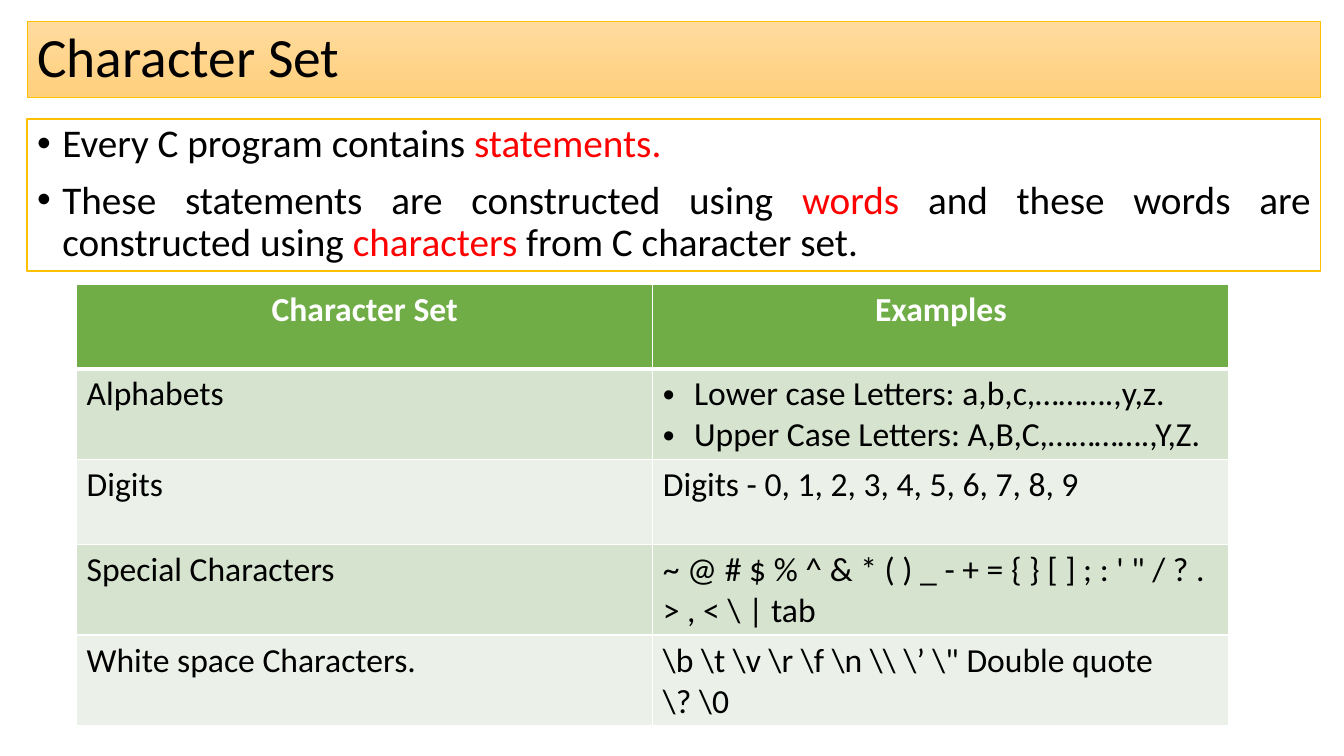
from lxml import etree
from pptx import Presentation
from pptx.dml.color import RGBColor
from pptx.enum.text import MSO_ANCHOR, MSO_AUTO_SIZE, PP_ALIGN
from pptx.oxml.ns import qn
from pptx.util import Inches, Pt

LEFT, CENTER, JUSTIFY = PP_ALIGN.LEFT, PP_ALIGN.CENTER, PP_ALIGN.JUSTIFY
MIDDLE, NO_AUTOFIT = MSO_ANCHOR.MIDDLE, MSO_AUTO_SIZE.NONE

INTRO = [
    [("Every C program contains ", False), ("statements. ", True)],
    [("These statements are constructed using ", False), ("words", True),
     (" and these words are constructed using ", False), ("characters", True),
     (" from C character set.", False)],
]
HEADINGS = ["Character Set", "Examples"]
CHARACTER_SETS = [
    ("Alphabets", ["Lower case Letters: a,b,c,……….,y,z.",
                   "Upper Case Letters: A,B,C,………….,Y,Z."], True),
    ("Digits", ["Digits - 0, 1, 2, 3, 4, 5, 6, 7, 8, 9"], False),
    ("Special Characters",
     [r"""~ @ # $ % ^ & * ( ) _ - + = { } [ ] ; : ' " / ? . > , < \ | tab"""], False),
    ("White space Characters.",
     [r"""\b \t \v \r \f \n \\ \’ \" Double quote""", r"\? \0"], False),
]


def rgb(value):
    return RGBColor.from_string(value)


class CharacterSetSlide:
    """Holds the slide and its style, and draws each kind of element."""

    FONT = "Calibri"
    BLACK, WHITE, RED, GOLD = "000000", "FFFFFF", "FF0000", "FFC000"
    TITLE_GRADIENT = ("FFDB9E", "FFD07C")
    HEADER_FILL, BAND_FILLS = "70AD47", ("D5E3CF", "EBF1E9")

    def __init__(self, presentation):
        self.slide = presentation.slides.add_slide(presentation.slide_layouts[5])

    def style(self, paragraph, size, color, align=LEFT, bold=False):
        font = paragraph.font
        font.name, font.size, font.bold = self.FONT, Pt(size), bold
        font.color.rgb = rgb(color)
        paragraph.alignment = align

    def bullet(self, paragraph, indent):
        properties = paragraph._p.get_or_add_pPr()
        properties.set("marL", str(Inches(indent)))
        properties.set("indent", str(-Inches(indent)))
        mark_font = etree.Element(qn("a:buFont"), typeface="Arial")
        mark = etree.Element(qn("a:buChar"), char="•")
        defaults = properties.find(qn("a:defRPr"))
        defaults.addprevious(mark_font)
        defaults.addprevious(mark)

    def outline(self, shape, width):
        shape.line.color.rgb = rgb(self.GOLD)
        shape.line.width = Pt(width)

    def title(self, text, left, top, width, height):
        title = self.slide.shapes.title
        title.left, title.top = Inches(left), Inches(top)
        title.width, title.height = Inches(width), Inches(height)
        title.fill.gradient()
        title.fill.gradient_angle = 270
        for stop, color in zip(title.fill.gradient_stops, self.TITLE_GRADIENT):
            stop.color.rgb = rgb(color)
        self.outline(title, 0.5)
        frame = title.text_frame
        frame.text = text
        frame.auto_size, frame.vertical_anchor = NO_AUTOFIT, MIDDLE
        frame.paragraphs[0].line_spacing = 0.9
        self.style(frame.paragraphs[0], 39.6, self.BLACK)

    def bullets(self, points, left, top, width, height):
        box = self.slide.shapes.add_textbox(
            Inches(left), Inches(top), Inches(width), Inches(height))
        box.fill.solid()
        box.fill.fore_color.rgb = rgb(self.WHITE)
        self.outline(box, 1)
        frame = box.text_frame
        frame.word_wrap = True
        for index, point in enumerate(points):
            paragraph = frame.add_paragraph() if index else frame.paragraphs[0]
            self.style(paragraph, 28, self.BLACK, JUSTIFY)
            paragraph.line_spacing, paragraph.space_before = 0.9, Pt(10)
            self.bullet(paragraph, 0.25)
            for text, highlighted in point:
                run = paragraph.add_run()
                run.text = text
                if highlighted:
                    run.font.color.rgb = rgb(self.RED)

    def cell(self, cell, lines, fill, color, align=LEFT, bold=False,
             bulleted=False, top=1, bottom=1):
        properties = cell._tc.get_or_add_tcPr()
        for side, width in zip("LRTB", (1, 1, top, bottom)):
            border = etree.SubElement(properties, qn(f"a:ln{side}"), w=str(Pt(width)))
            paint = etree.SubElement(border, qn("a:solidFill"))
            etree.SubElement(paint, qn("a:srgbClr"), val=self.WHITE)
        cell.fill.solid()
        cell.fill.fore_color.rgb = rgb(fill)
        cell.text = "\n".join(lines)
        for paragraph in cell.text_frame.paragraphs:
            self.style(paragraph, 24, color, align, bold)
            if bulleted:
                self.bullet(paragraph, 0.31)

    def table(self, headings, rows, left, top, width, row_height):
        count = len(rows) + 1
        table = self.slide.shapes.add_table(
            count, len(headings), Inches(left), Inches(top),
            Inches(width), Inches(row_height * count)).table
        for column, heading in enumerate(headings):
            self.cell(table.cell(0, column), [heading], self.HEADER_FILL,
                      self.WHITE, CENTER, bold=True, bottom=3)
        for row, (name, examples, bulleted) in enumerate(rows, 1):
            fill = self.BAND_FILLS[(row - 1) % 2]
            edge = 3 if row == 1 else 1
            self.cell(table.cell(row, 0), [name], fill, self.BLACK, top=edge)
            self.cell(table.cell(row, 1), examples, fill, self.BLACK,
                      bulleted=bulleted, top=edge)


def main():
    presentation = Presentation()
    presentation.slide_width, presentation.slide_height = Inches(13.33), Inches(7.5)
    page = CharacterSetSlide(presentation)
    page.title("Character Set", 0.27, 0.21, 12.83, 0.76)
    page.bullets(INTRO, 0.27, 1.18, 12.83, 1.51)
    page.table(HEADINGS, CHARACTER_SETS, 0.76, 2.82, 11.43, 0.84)
    presentation.save("out.pptx")


if __name__ == "__main__":
    main()
